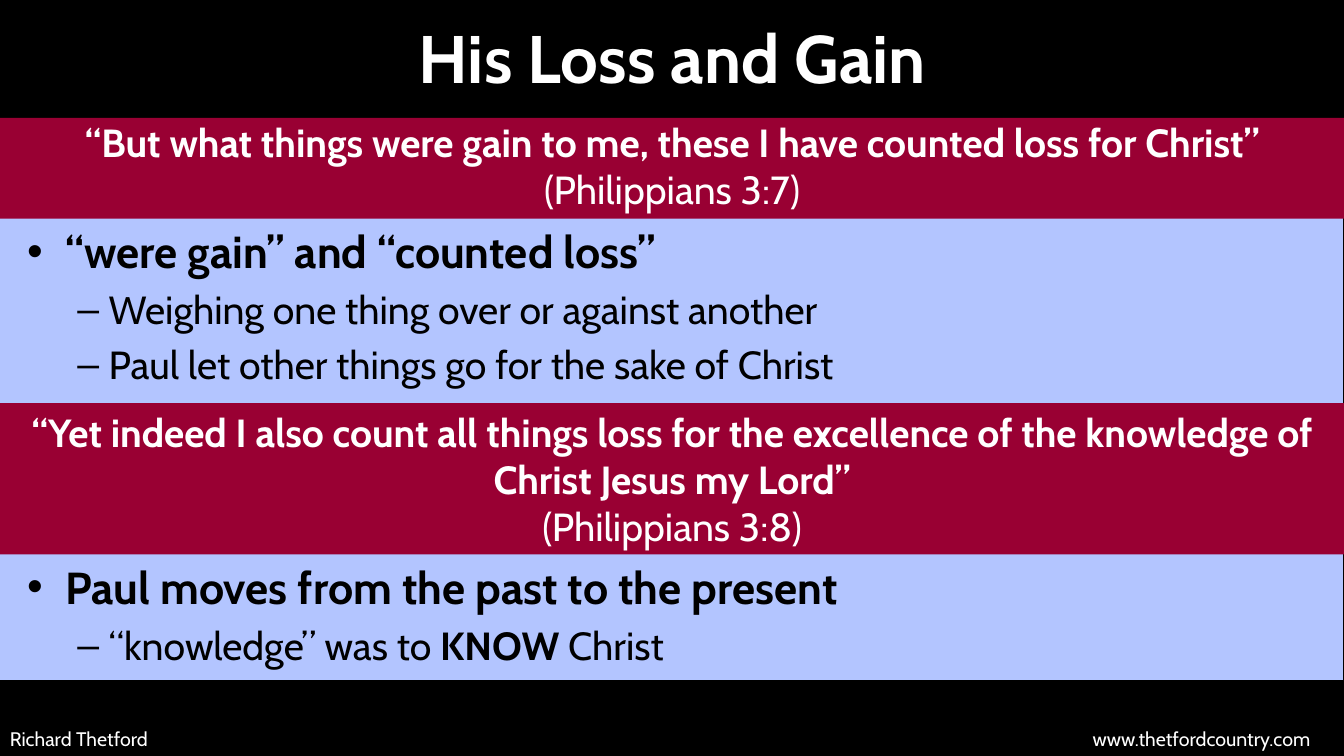
from lxml.etree import SubElement
from pptx import Presentation
from pptx.dml.color import RGBColor
from pptx.enum.shapes import MSO_SHAPE
from pptx.enum.text import MSO_ANCHOR, PP_ALIGN
from pptx.oxml.ns import qn
from pptx.util import Inches, Pt

BLACK = RGBColor(0x00, 0x00, 0x00)
WHITE = RGBColor(0xFF, 0xFF, 0xFF)
CRIMSON = RGBColor(0x99, 0x00, 0x33)
PALE_BLUE = RGBColor(0xB3, 0xC5, 0xFF)
FONT = "Cabin"
WIDTH, HEIGHT = 13.33, 7.5

# Per outline level: bullet, text indent, hanging indent (inches), size (points)
LEVELS = [("•", 0.38, 0.38, 32), ("–", 0.81, 0.31, 28)]


def add_panel(page, box, fill, line=None):
    panel = page.shapes.add_shape(MSO_SHAPE.RECTANGLE, *map(Inches, box))
    panel.shadow.inherit = False
    panel.fill.solid()
    panel.fill.fore_color.rgb = fill
    if line is None:
        panel.line.fill.background()
    else:
        panel.line.color.rgb = line
        panel.line.width = Pt(0.75)


def add_text_frame(page, box):
    frame = page.shapes.add_textbox(*map(Inches, box)).text_frame
    frame.word_wrap = True
    return frame


def add_span(para, text, size, color, bold=False):
    span = para.add_run()
    span.text = text
    span.font.name = FONT
    span.font.size = Pt(size)
    span.font.bold = bold
    span.font.color.rgb = color


def add_title(page, box, text):
    frame = add_text_frame(page, box)
    frame.vertical_anchor = MSO_ANCHOR.MIDDLE
    para = frame.paragraphs[0]
    para.alignment = PP_ALIGN.CENTER
    add_span(para, text, 48, WHITE, bold=True)


def add_verse(page, box, quote, reference, lift=0.0):
    """Crimson band with a quotation; lift raises the text above the band's top."""
    left, top, width, height = box
    add_panel(page, box, CRIMSON)
    frame = add_text_frame(page, (left, top - lift, width, height + lift))
    para = frame.paragraphs[0]
    para.alignment = PP_ALIGN.CENTER
    add_span(para, quote, 28, WHITE, bold=True)
    para.add_line_break()
    add_span(para, reference, 28, WHITE)


def add_outline(page, box, items):
    """Bulleted list; each item is a level and its (text, bold) spans."""
    frame = add_text_frame(page, box)
    for index, (level, spans) in enumerate(items):
        para = frame.add_paragraph() if index else frame.paragraphs[0]
        bullet, indent, hanging, size = LEVELS[level]
        para.level = level
        para.space_before = Pt(0.2 * size if index else 0)
        properties = para._p.get_or_add_pPr()
        properties.set("marL", str(Inches(indent)))
        properties.set("indent", str(-Inches(hanging)))
        SubElement(properties, qn("a:buFont"), typeface="Arial")
        SubElement(properties, qn("a:buChar"), char=bullet)
        for text, bold in spans:
            add_span(para, text, size, BLACK, bold)


def add_footer(page, box, author, address):
    para = add_text_frame(page, box).paragraphs[0]
    # A right tab stop sets the address against the right edge
    tabs = SubElement(para._p.get_or_add_pPr(), qn("a:tabLst"))
    SubElement(tabs, qn("a:tab"), pos=str(Inches(box[2] - 0.43)), algn="r")
    add_span(para, f"{author}\t{address}", 14, WHITE)


def build_slide(deck):
    page = deck.slides.add_slide(deck.slide_layouts[6])
    page.background.fill.solid()
    page.background.fill.fore_color.rgb = BLACK

    # Title and pale backdrop
    add_title(page, (2.17, 0.13, 9, 0.87), "His Loss and Gain")
    add_panel(page, (0, 2.08, WIDTH, 4.67), PALE_BLUE, BLACK)

    # First verse and its points
    add_verse(page, (0, 1.17, WIDTH, 1),
              "“But what things were gain to me, these I have counted loss for Christ”",
              "(Philippians 3:7)", lift=0.05)
    add_outline(page, (0.17, 2.17, 11.08, 1.83), [
        (0, [("“were gain” and “counted loss”", True)]),
        (1, [("Weighing one thing over or against another", False)]),
        (1, [("Paul let other things go for the sake of Christ", False)]),
    ])

    # Second verse and its points
    add_verse(page, (0, 4, WIDTH, 1.5),
              "“Yet indeed I also count all things loss for the excellence of the "
              "knowledge of Christ Jesus my Lord”",
              "(Philippians 3:8)")
    add_outline(page, (0.17, 5.5, 11.08, 1.25), [
        (0, [("Paul moves from the past to the present", True)]),
        (1, [("“knowledge” was to ", False), ("KNOW", True), (" Christ", False)]),
    ])

    # Footer
    add_footer(page, (0, 7.16, WIDTH, 0.34),
               "Richard Thetford", "www.thetfordcountry.com")


def main():
    deck = Presentation()
    deck.slide_width, deck.slide_height = Inches(WIDTH), Inches(HEIGHT)
    build_slide(deck)
    deck.save("out.pptx")


if __name__ == "__main__":
    main()
